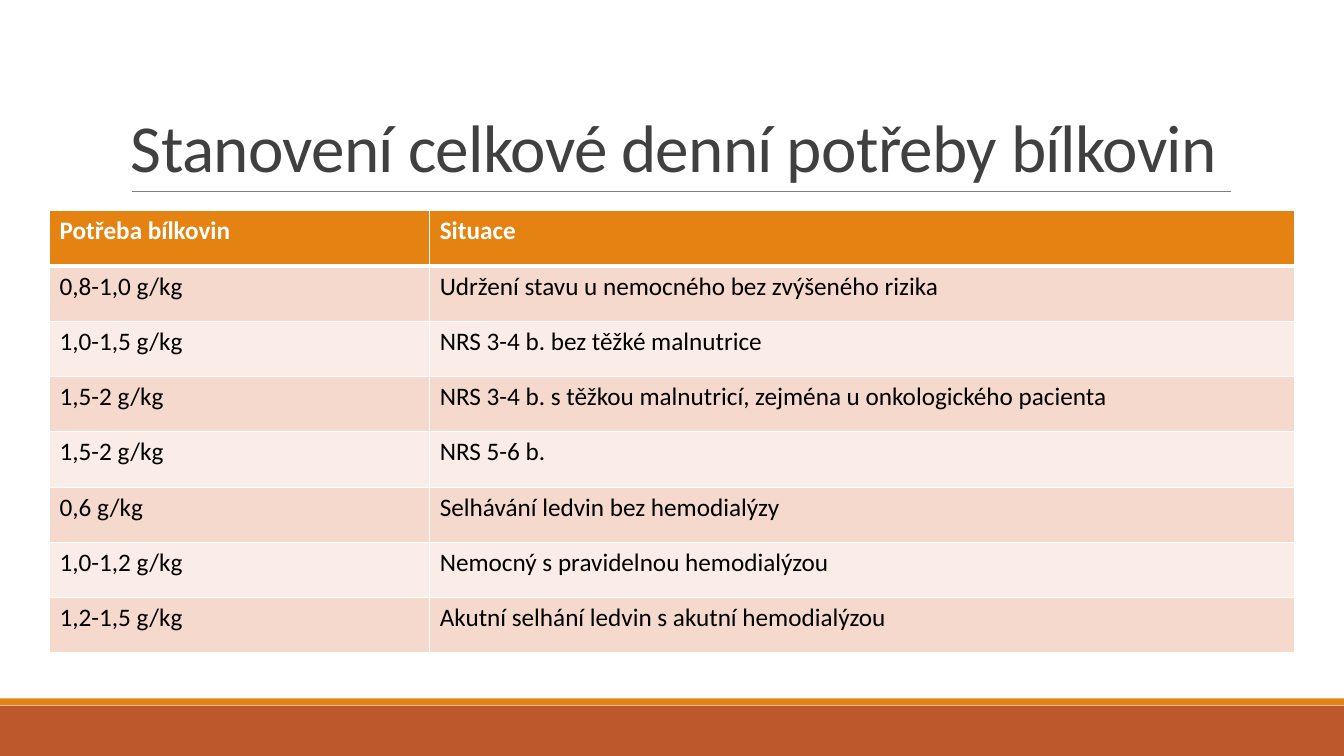
from dataclasses import dataclass

from lxml.etree import SubElement
from pptx import Presentation
from pptx.dml.color import RGBColor
from pptx.enum.shapes import MSO_CONNECTOR, MSO_SHAPE
from pptx.enum.text import MSO_ANCHOR
from pptx.oxml.ns import qn
from pptx.slide import Slide
from pptx.table import _Cell
from pptx.text.text import _Paragraph
from pptx.util import Cm, Pt


@dataclass(frozen=True)
class Theme:
    font: str = "Calibri"
    title_size: int = 48
    table_size: int = 18
    title: str = "404040"
    rule: str = "808080"
    orange: str = "E48312"
    rust: str = "BD582C"
    dark_row: str = "F5D9CC"
    light_row: str = "FAEDE7"
    white: str = "FFFFFF"
    black: str = "000000"


@dataclass(frozen=True)
class Band:
    top: float
    height: float
    color: str


@dataclass(frozen=True)
class Need:
    protein: str
    situation: str


THEME = Theme()
SLIDE_WIDTH, SLIDE_HEIGHT = 33.87, 19.05
COLUMN_WIDTHS = (9.58, 21.79)
TABLE_HEIGHT = 11.15
BANDS = (
    Band(17.78, 1.27, THEME.rust),
    Band(17.6, 0.17, THEME.orange),
)
HEADER = Need("Potřeba bílkovin", "Situace")
NEEDS = (
    Need("0,8-1,0 g/kg", "Udržení stavu u nemocného bez zvýšeného rizika"),
    Need("1,0-1,5 g/kg", "NRS 3-4 b. bez těžké malnutrice"),
    Need("1,5-2 g/kg", "NRS 3-4 b. s těžkou malnutricí, zejména u onkologického pacienta"),
    Need("1,5-2 g/kg", "NRS 5-6 b."),
    Need("0,6 g/kg", "Selhávání ledvin bez hemodialýzy"),
    Need("1,0-1,2 g/kg", "Nemocný s pravidelnou hemodialýzou"),
    Need("1,2-1,5 g/kg", "Akutní selhání ledvin s akutní hemodialýzou"),
)


def add_run(paragraph: _Paragraph, text: str, size: int, color: str, bold: bool = False):
    """Append a styled run and return it."""
    run = paragraph.add_run()
    run.text = text
    run.font.name = THEME.font
    run.font.size = Pt(size)
    run.font.bold = bold
    run.font.color.rgb = RGBColor.from_string(color)
    return run


def add_band(slide: Slide, band: Band) -> None:
    """Draw a full-width band at the foot of the slide."""
    strip = slide.shapes.add_shape(
        MSO_SHAPE.RECTANGLE, 0, Cm(band.top), Cm(SLIDE_WIDTH), Cm(band.height)
    )
    strip.shadow.inherit = False
    strip.fill.solid()
    strip.fill.fore_color.rgb = RGBColor.from_string(band.color)
    strip.line.fill.background()


def add_title(slide: Slide, text: str) -> None:
    """Draw the heading and the rule below it."""
    rule = slide.shapes.add_connector(
        MSO_CONNECTOR.STRAIGHT, Cm(3.33), Cm(4.83), Cm(31.01), Cm(4.83)
    )
    rule.line.color.rgb = RGBColor.from_string(THEME.rule)
    rule.line.width = Pt(0.5)
    SubElement(rule._element.spPr, qn("a:effectLst"))

    heading = slide.shapes.add_textbox(Cm(3.05), Cm(0.8), Cm(27.94), Cm(4.03)).text_frame
    heading.word_wrap = True
    heading.vertical_anchor = MSO_ANCHOR.BOTTOM
    paragraph = heading.paragraphs[0]
    paragraph.line_spacing = 0.85
    run = add_run(paragraph, text, THEME.title_size, THEME.title)
    run.font._element.set("spc", "-50")


def add_border(cell: _Cell, side: str, width: float) -> None:
    """Give one side of a cell a white border."""
    border = SubElement(cell._tc.get_or_add_tcPr(), qn(f"a:ln{side}"), w=str(Pt(width)))
    fill = SubElement(border, qn("a:solidFill"))
    SubElement(fill, qn("a:srgbClr"), val=THEME.white)


def fill_cell(cell: _Cell, text: str, row: int) -> None:
    """Write and style a cell according to its row."""
    is_header = row == 0
    widths = {"L": 1, "R": 1, "T": 3 if row == 1 else 1, "B": 3 if is_header else 1}
    for side, width in widths.items():
        add_border(cell, side, width)
    row_color = THEME.dark_row if row % 2 else THEME.light_row
    cell.fill.solid()
    cell.fill.fore_color.rgb = RGBColor.from_string(THEME.orange if is_header else row_color)
    text_color = THEME.white if is_header else THEME.black
    add_run(cell.text_frame.paragraphs[0], text, THEME.table_size, text_color, is_header)


def add_needs_table(slide: Slide) -> None:
    """Draw the table of protein needs by situation."""
    lines = (HEADER, *NEEDS)
    needs_table = slide.shapes.add_table(
        len(lines), len(COLUMN_WIDTHS), Cm(1.25), Cm(5.31),
        Cm(sum(COLUMN_WIDTHS)), Cm(TABLE_HEIGHT),
    ).table
    for column, width in zip(needs_table.columns, COLUMN_WIDTHS):
        column.width = Cm(width)
    for row, need in enumerate(lines):
        for column, text in enumerate((need.protein, need.situation)):
            fill_cell(needs_table.cell(row, column), text, row)


def main() -> None:
    """Build and save the slide."""
    presentation = Presentation()
    presentation.slide_width = Cm(SLIDE_WIDTH)
    presentation.slide_height = Cm(SLIDE_HEIGHT)
    slide = presentation.slides.add_slide(presentation.slide_layouts[6])
    for band in BANDS:
        add_band(slide, band)
    add_title(slide, "Stanovení celkové denní potřeby bílkovin")
    add_needs_table(slide)
    presentation.save("out.pptx")


if __name__ == "__main__":
    main()
